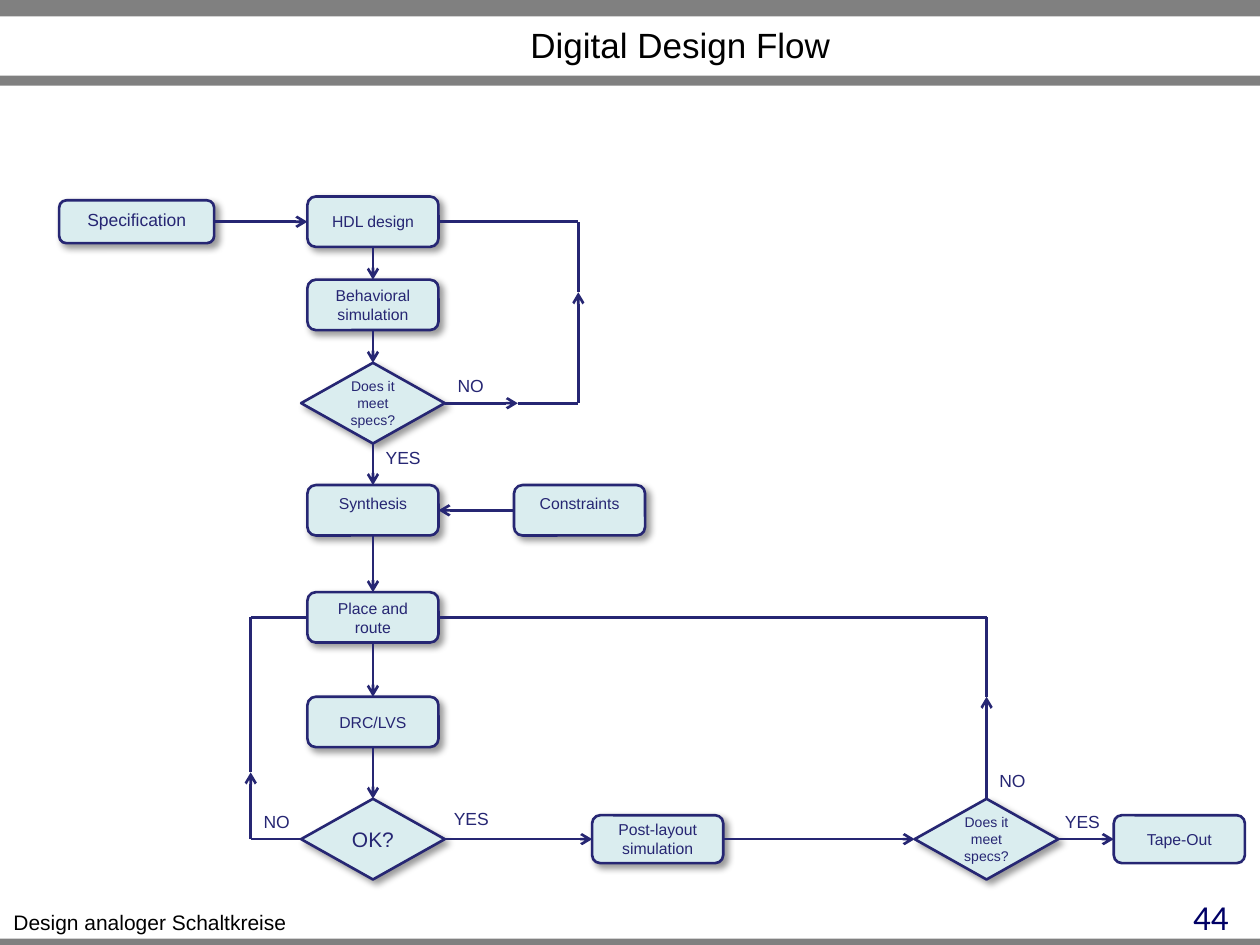
from dataclasses import dataclass

from lxml import etree
from pptx import Presentation
from pptx.dml.color import RGBColor
from pptx.enum import shapes, text
from pptx.oxml import ns
from pptx.util import Inches, Pt


@dataclass(frozen=True)
class Theme:
    font: str = "Arial"
    number_font: str = "Calibri"
    bar: str = "808080"
    black: str = "000000"
    number: str = "000066"
    ink: str = "262673"
    fill: str = "DAEDEF"
    heading_size: int = 20
    footer_size: int = 12
    label_size: int = 10
    step_size: int = 9
    question_size: int = 8
    line_width: float = 1.5


theme = Theme()
TOP, LEFT, BOTTOM, RIGHT = range(4)
ROUNDED = shapes.MSO_SHAPE.ROUNDED_RECTANGLE
DECISION = shapes.MSO_SHAPE.FLOWCHART_DECISION
MIDDLE, UPPER = text.MSO_ANCHOR.MIDDLE, text.MSO_ANCHOR.TOP
CENTER, FLUSH_RIGHT = text.PP_ALIGN.CENTER, text.PP_ALIGN.RIGHT

prs = Presentation()
prs.slide_width, prs.slide_height = Inches(10), Inches(7.5)
slide = prs.slides.add_slide(prs.slide_layouts[5])


def write(frame, words, size, color=theme.ink, align=CENTER, anchor=UPPER, font=theme.font):
    frame.text = words
    frame.vertical_anchor = anchor
    for paragraph in frame.paragraphs:
        paragraph.alignment = align
        paragraph.font.name = font
        paragraph.font.size = Pt(size)
        paragraph.font.color.rgb = RGBColor.from_string(color)


def connect(start, end, arrow):
    """Join two stops, each a (step name, side) pair or an (x, y) point."""
    line = slide.shapes.add_connector(shapes.MSO_CONNECTOR.STRAIGHT, 0, 0, 0, 0)
    if start[0] in steps:
        line.begin_connect(steps[start[0]], start[1])
    else:
        line.begin_x, line.begin_y = map(Inches, start)
    if end[0] in steps:
        line.end_connect(steps[end[0]], end[1])
    else:
        line.end_x, line.end_y = map(Inches, end)
    line.line.color.rgb = RGBColor.from_string(theme.ink)
    line.line.width = Pt(theme.line_width)
    if arrow:
        etree.SubElement(line.line._get_or_add_ln(), ns.qn("a:tailEnd"), type="arrow")
    etree.SubElement(line._element.spPr, ns.qn("a:effectLst"))


# Page frame
for top, height in ((0, 0.13), (0.6, 0.08), (7.45, 0.05)):
    bar = slide.shapes.add_shape(
        shapes.MSO_SHAPE.RECTANGLE, 0, Inches(top), prs.slide_width, Inches(height))
    bar.shadow.inherit = False
    bar.fill.solid()
    bar.fill.fore_color.rgb = RGBColor.from_string(theme.bar)
    bar.line.fill.background()

title = slide.shapes.title
title.left, title.top, title.width, title.height = map(Inches, (1.3, 0.14, 8.2, 0.38))
write(title.text_frame, "Digital Design Flow", theme.heading_size, theme.black)
title.text_frame.auto_size = text.MSO_AUTO_SIZE.NONE

footer = slide.shapes.add_textbox(0, Inches(7.17), Inches(2.38), Inches(0.3))
footer.text_frame.word_wrap = False
write(footer.text_frame, "Design analoger Schaltkreise", theme.footer_size, theme.black)

page_number = slide.shapes.add_textbox(Inches(7.52), Inches(7.06), Inches(2.33), Inches(0.31))
page_number.text_frame.word_wrap = True
write(page_number.text_frame, "44", theme.heading_size, theme.number, FLUSH_RIGHT,
      font=theme.number_font)

# Steps and decisions: name, words, left, top, width, height, size, anchor
box_left, box_w, box_h = 2.44, 1.04, 0.4
choice_left, choice_w, choice_h = 2.39, 1.14, 0.64
step_specs = [
    ("spec", "Specification", 0.47, 1.59, 1.23, 0.34, theme.label_size, UPPER),
    ("hdl", "HDL design", box_left, 1.56, box_w, box_h, theme.step_size, MIDDLE),
    ("behavior", "Behavioral\nsimulation", box_left, 2.22, box_w, box_h, theme.step_size, MIDDLE),
    ("synthesis", "Synthesis", box_left, 3.85, box_w, box_h, theme.step_size, UPPER),
    ("constraints", "Constraints", 4.08, 3.85, box_w, box_h, theme.step_size, UPPER),
    ("place", "Place and route", box_left, 4.7, box_w, box_h, theme.step_size, MIDDLE),
    ("drc", "DRC/LVS", box_left, 5.53, box_w, box_h, theme.step_size, MIDDLE),
    ("post", "Post-layout simulation", 4.7, 6.47, box_w, 0.38, theme.step_size, MIDDLE),
    ("tape", "Tape-Out", 8.84, 6.47, box_w, 0.38, theme.step_size, MIDDLE),
    ("specs met", "Does it meet specs?", choice_left, 2.88, choice_w, choice_h,
     theme.question_size, MIDDLE),
    ("ok", "OK?", choice_left, 6.34, choice_w, choice_h, theme.footer_size, MIDDLE),
    ("final check", "Does it meet specs?", 7.26, 6.34, choice_w, choice_h,
     theme.question_size, MIDDLE),
]
decisions = {"specs met", "ok", "final check"}
steps = {}
for name, words, left, top, width, height, size, anchor in step_specs:
    step = slide.shapes.add_shape(
        DECISION if name in decisions else ROUNDED, *map(Inches, (left, top, width, height)))
    step.fill.solid()
    step.fill.fore_color.rgb = RGBColor.from_string(theme.fill)
    step.line.color.rgb = RGBColor.from_string(theme.ink)
    step.line.width = Pt(theme.line_width)
    step.shadow.inherit = False
    if name != "tape":
        effects = step._element.spPr.find(ns.qn("a:effectLst"))
        shadow = etree.SubElement(
            effects, ns.qn("a:outerShdw"), blurRad=str(Pt(4)), dist=str(Pt(3)),
            dir=str(45 * 60000), algn="tl", rotWithShape="0")
        shade = etree.SubElement(shadow, ns.qn("a:srgbClr"), val=theme.black)
        etree.SubElement(shade, ns.qn("a:alpha"), val="40000")
    frame = step.text_frame
    frame.word_wrap = True
    if name in decisions:
        frame.margin_left = frame.margin_right = frame.margin_top = frame.margin_bottom = 0
    write(frame, words, size, anchor=anchor)
    steps[name] = step

# Forward flow
main_column = ["hdl", "behavior", "specs met", "synthesis", "place", "drc", "ok"]
for upper, lower in zip(main_column, main_column[1:]):
    connect((upper, BOTTOM), (lower, TOP), True)
bottom_row = ["ok", "post", "final check", "tape"]
for before, after in [("spec", "hdl"), *zip(bottom_row, bottom_row[1:])]:
    connect((before, RIGHT), (after, LEFT), True)
connect(("constraints", LEFT), ("synthesis", RIGHT), True)

# Feedback loops; an arrowhead marks each listed midway stop
loops = [
    [("specs met", RIGHT), (4.11, 3.2), (4.59, 3.2), (4.59, 2.32), (4.59, 1.76), ("hdl", RIGHT)],
    [("ok", LEFT), (1.99, 6.66), (1.99, 6.13), (1.99, 4.9), ("place", LEFT)],
    [("final check", TOP), (7.83, 5.53), (7.83, 4.9), ("place", RIGHT)],
]
midway = {(4.11, 3.2), (4.59, 2.32), (1.99, 6.13), (7.83, 5.53)}
for loop in loops:
    for start, end in zip(loop, loop[1:]):
        connect(start, end, end in midway)

# Answers beside the decisions
answer_widths = {"YES": 0.48, "NO": 0.41}
for answer, left, top in [("NO", 3.53, 2.93), ("YES", 2.96, 3.5), ("YES", 3.5, 6.36),
                          ("NO", 1.99, 6.39), ("NO", 7.83, 6.06), ("YES", 8.35, 6.39)]:
    label = slide.shapes.add_textbox(
        *map(Inches, (left, top, answer_widths[answer], 0.27)))
    label.text_frame.word_wrap = False
    write(label.text_frame, answer, theme.label_size)

prs.save("out.pptx")
